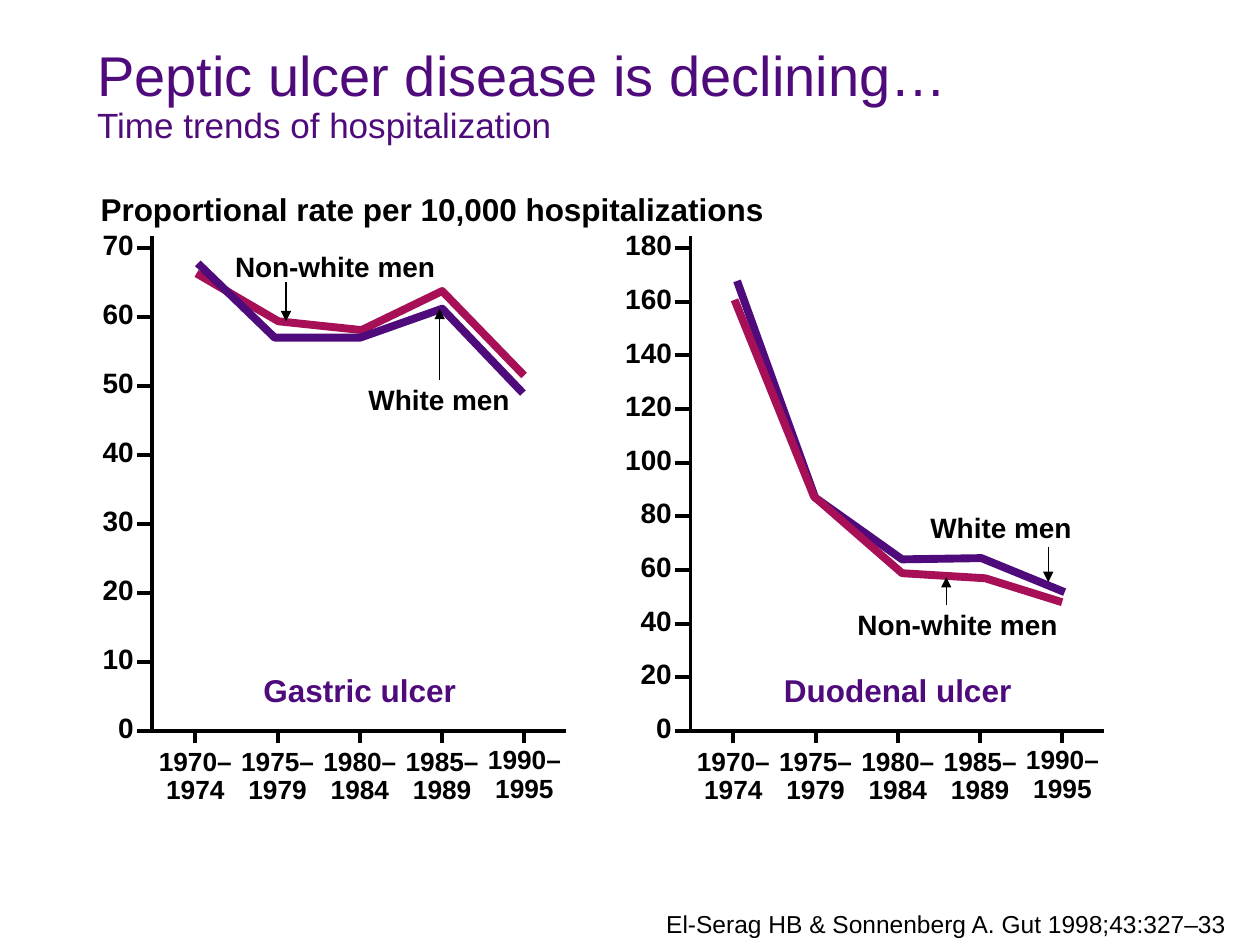
from lxml.etree import SubElement
from pptx import Presentation
from pptx.dml.color import RGBColor
from pptx.enum.shapes import MSO_CONNECTOR
from pptx.enum.text import MSO_ANCHOR, MSO_AUTO_SIZE, PP_ALIGN
from pptx.oxml.ns import qn
from pptx.util import Inches, Pt

COLORS = {"black": "000000", "white": "FFFFFF", "purple": "4F0B7B", "crimson": "A71056"}
PERIODS = ["1970–\n1974", "1975–\n1979", "1980–\n1984", "1985–\n1989", "1990–\n1995"]
AXIS_BOTTOM, AXIS_TOP, TOP_TICK = 5.8, 1.87, 1.97
AXIS_LENGTH, TICK_LENGTH = 3.28, 0.12
FIRST_PERIOD, PERIOD_STEP = 0.34, 0.653

PANELS = [
    {
        "axis": 1.21, "maximum": 70, "step": 10,
        "name": ("Gastric ulcer", 1.99, 1.73),
        "series": [
            ("crimson", [(1.56, 2.17), (2.21, 2.55), (2.87, 2.62), (3.51, 2.31), (4.16, 2.98)]),
            ("purple", [(1.57, 2.09), (2.18, 2.68), (2.86, 2.68), (3.51, 2.45), (4.15, 3.12)]),
        ],
        "labels": [("Non-white men", 1.76, 1.93, 1.8), ("White men", 2.82, 2.99, 1.33)],
        "arrows": [(2.27, 2.24, 2.55), (3.49, 3.02, 2.45)],
    },
    {
        "axis": 5.48, "maximum": 180, "step": 20,
        "name": ("Duodenal ulcer", 6.12, 2.01),
        "series": [
            ("purple", [(5.85, 2.23), (6.47, 3.95), (7.16, 4.44), (7.79, 4.43), (8.45, 4.7)]),
            ("crimson", [(5.83, 2.38), (6.46, 3.94), (7.16, 4.55), (7.82, 4.59), (8.43, 4.78)]),
        ],
        "labels": [("Non-white men", 6.7, 4.77, 1.8), ("White men", 7.28, 4, 1.33)],
        "arrows": [(8.32, 4.34, 4.62), (7.51, 4.8, 4.58)],
    },
]


def color(name):
    return RGBColor.from_string(COLORS[name])


def set_all(target, values):
    for name, value in values.items():
        setattr(target, name, value)


def write_lines(para, lines, sizes, ink, bold):
    """Put lines in one paragraph, parted by line breaks."""
    for index, (line, size) in enumerate(zip(lines, sizes)):
        if index:
            para.add_line_break()
        span = para.add_run()
        span.text = line
        set_all(span.font, {"name": "Arial", "size": Pt(size), "bold": bold})
        span.font.color.rgb = color(ink)


def add_title(page, lines, sizes):
    title = page.shapes.title
    set_all(title, {"left": Inches(0.67), "top": Inches(0.33),
                    "width": Inches(9.33), "height": Inches(1.25)})
    set_all(title.text_frame, {"vertical_anchor": MSO_ANCHOR.TOP, "word_wrap": True,
                               "auto_size": MSO_AUTO_SIZE.NONE})
    para = title.text_frame.paragraphs[0]
    set_all(para, {"alignment": PP_ALIGN.LEFT, "line_spacing": 0.9})
    write_lines(para, lines, sizes, "purple", False)


def add_text(page, text, left, top, width, height=0.37, size=16, ink="black", bold=True,
             align=PP_ALIGN.CENTER, spacing=None, wrap=False, anchor=MSO_ANCHOR.TOP):
    box = page.shapes.add_textbox(Inches(left), Inches(top), Inches(width), Inches(height))
    set_all(box.text_frame, {"word_wrap": wrap, "vertical_anchor": anchor,
                             "auto_size": MSO_AUTO_SIZE.SHAPE_TO_FIT_TEXT})
    para = box.text_frame.paragraphs[0]
    set_all(para, {"alignment": align, "line_spacing": spacing})
    lines = text.split("\n")
    write_lines(para, lines, [size] * len(lines), ink, bold)
    return box


def add_line(page, start, end, width=2.25, arrow=False):
    line = page.shapes.add_connector(
        MSO_CONNECTOR.STRAIGHT, *(Inches(value) for value in (*start, *end)))
    line.line.color.rgb = color("black")
    line.line.width = Pt(width)
    properties = line._element.spPr
    if arrow:
        SubElement(properties.find(qn("a:ln")), qn("a:tailEnd"), type="triangle")
    SubElement(properties, qn("a:effectLst"))


def add_trend(page, ink, points):
    (first, *rest) = [(Inches(x), Inches(y)) for x, y in points]
    builder = page.shapes.build_freeform(*first)
    builder.add_line_segments(rest, close=False)
    trend = builder.convert_to_shape()
    trend.shadow.inherit = False
    trend.fill.background()
    trend.line.color.rgb = color(ink)
    trend.line.width = Pt(4.5)


def add_value_axis(page, axis, maximum, step):
    add_line(page, (axis, AXIS_BOTTOM), (axis, AXIS_TOP))
    for value in range(0, maximum + 1, step):
        y = AXIS_BOTTOM - (AXIS_BOTTOM - TOP_TICK) * value / maximum
        width = 0.2 + 0.125 * len(str(value))
        add_line(page, (axis - TICK_LENGTH, y), (axis, y))
        add_text(page, str(value), axis - 0.05 - width, y - 0.21, width, align=PP_ALIGN.RIGHT)


def add_period_axis(page, axis):
    add_line(page, (axis, AXIS_BOTTOM), (axis + AXIS_LENGTH, AXIS_BOTTOM))
    for index, period in enumerate(PERIODS):
        x = axis + FIRST_PERIOD + index * PERIOD_STEP
        top = 5.88 if period == PERIODS[-1] else 5.89
        add_line(page, (x, 5.9), (x, AXIS_BOTTOM))
        add_text(page, period, x - 0.39, top, 0.78, 0.55, size=15, spacing=0.9)


def add_panel(page, panel):
    add_period_axis(page, panel["axis"])
    add_value_axis(page, panel["axis"], panel["maximum"], panel["step"])
    for ink, points in panel["series"]:
        add_trend(page, ink, points)
    for label in panel["labels"]:
        add_text(page, *label)
    name, left, width = panel["name"]
    add_text(page, name, left, 5.28, width, 0.4, size=18, ink="purple")
    for x, start, end in panel["arrows"]:
        add_line(page, (x, start), (x, end), width=0.75, arrow=True)


def main():
    deck = Presentation()
    set_all(deck, {"slide_width": Inches(10), "slide_height": Inches(7.5)})
    page = deck.slides.add_slide(deck.slide_layouts[5])
    add_title(page, ["Peptic ulcer disease is declining…", "Time trends of hospitalization"],
              [32, 20])
    heading = add_text(page, "Proportional rate per 10,000 hospitalizations",
                       0.7, 1.46, 5.47, 0.4, size=18, align=PP_ALIGN.LEFT)
    heading.fill.solid()
    heading.fill.fore_color.rgb = color("white")
    for panel in PANELS:
        add_panel(page, panel)
    add_text(page, "El-Serag HB & Sonnenberg A. Gut 1998;43:327–33", 3.58, 7.19, 6.25, 0.31,
             size=14, bold=False, align=PP_ALIGN.RIGHT, spacing=0.9, wrap=True,
             anchor=MSO_ANCHOR.BOTTOM)
    deck.save("out.pptx")


if __name__ == "__main__":
    main()
